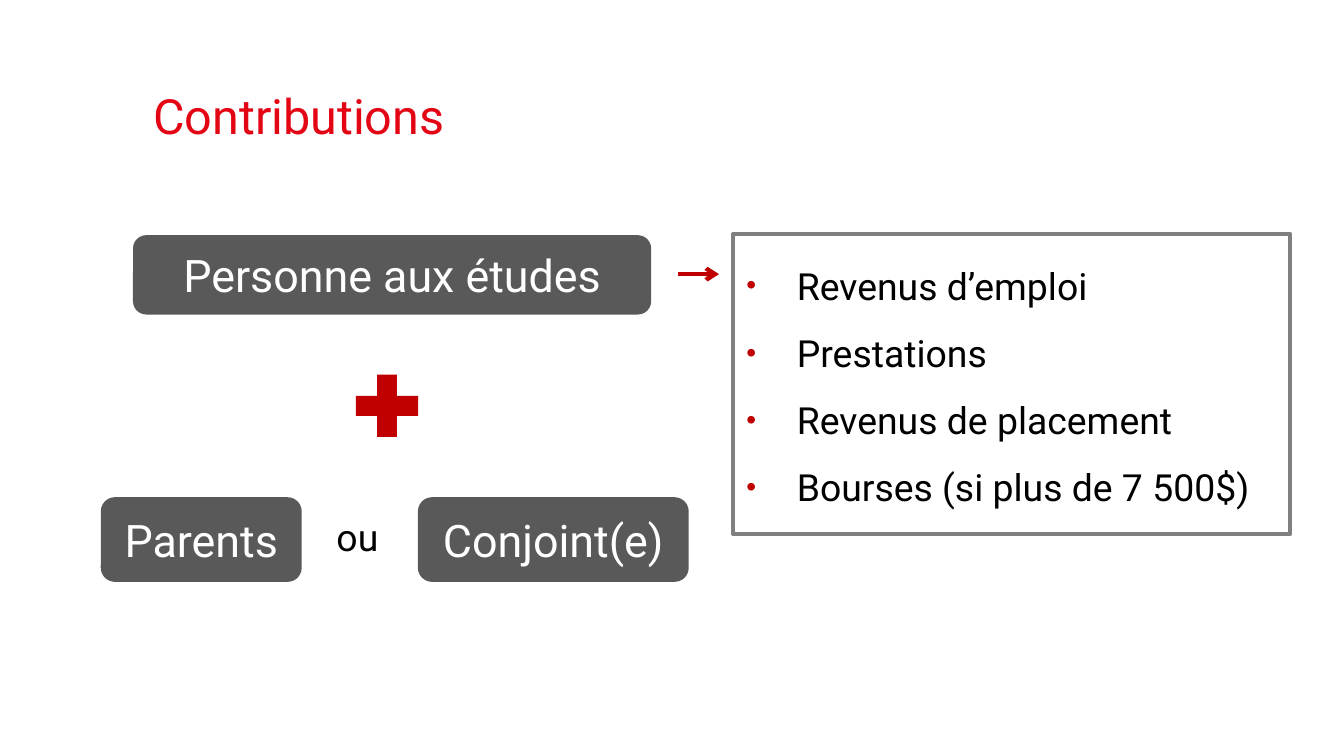
from lxml import etree
from pptx import Presentation
from pptx.dml.color import RGBColor
from pptx.enum.shapes import MSO_CONNECTOR, MSO_SHAPE
from pptx.enum.text import MSO_ANCHOR, PP_ALIGN
from pptx.oxml.ns import qn
from pptx.util import Pt

ROUND, RECT, PLUS = MSO_SHAPE.ROUNDED_RECTANGLE, MSO_SHAPE.RECTANGLE, MSO_SHAPE.MATH_PLUS
STRAIGHT = MSO_CONNECTOR.STRAIGHT
TOP, MIDDLE = MSO_ANCHOR.TOP, MSO_ANCHOR.MIDDLE
LEFT, CENTER = PP_ALIGN.LEFT, PP_ALIGN.CENTER

PX = 4572
THEME = {
    "font": "Roboto", "title": "E30513", "accent": "C00000", "box": "595959",
    "border": "808080", "light": "FFFFFF", "text": "000000",
    "title_size": 26, "box_size": 24, "body_size": 20, "line": 2.25,
}


def write(s, lines, size, color, anchor=TOP, **paragraph_format):
    tf = s.text_frame
    tf.word_wrap = True
    tf.vertical_anchor = anchor
    for i, line in enumerate(lines):
        p = tf.paragraphs[0] if i == 0 else tf.add_paragraph()
        for name, value in paragraph_format.items():
            setattr(p, name, value)
        r = p.add_run()
        r.text = line
        for name, value in {"name": THEME["font"], "size": Pt(THEME[size])}.items():
            setattr(r.font, name, value)
        r.font.color.rgb = RGBColor.from_string(THEME[color])
    return tf


def add_box(kind, at, fill=None, line=None):
    s = slide.shapes.add_shape(kind, *[v * PX for v in at])
    s.shadow.inherit = False
    for part, color in ((s.fill, fill), (s.line.fill, line)):
        if color:
            part.solid()
            part.fore_color.rgb = RGBColor.from_string(THEME[color])
        else:
            part.background()
    return s


prs = Presentation()
prs.slide_width, prs.slide_height = 2000 * PX, 1125 * PX
slide = prs.slides.add_slide(prs.slide_layouts[6])

title = slide.shapes.add_textbox(228 * PX, 138 * PX, 1620 * PX, 82 * PX)
tf = write(title, ["Contributions"], "title_size", "title", line_spacing=0.9)
for side in ("left", "top", "right", "bottom"):
    setattr(tf, f"margin_{side}", 0)

for label, at in (
    ("Personne aux études", (198, 350, 771, 118)),
    ("Parents", (150, 740, 299, 126)),
    ("Conjoint(e)", (622, 740, 403, 126)),
):
    s = add_box(ROUND, at, fill="box")
    write(s, [label], "box_size", "light", MIDDLE, alignment=CENTER)

either = slide.shapes.add_textbox(481 * PX, 764 * PX, 156 * PX, 70 * PX)
write(either, ["ou"], "body_size", "text", MIDDLE)

add_box(PLUS, (513, 541, 126, 126), fill="accent")

incomes = ["Revenus d’emploi", "Prestations", "Revenus de placement", "Bourses (si plus de 7 500$)"]
s = add_box(RECT, (1091, 348, 829, 447), line="border")
s.line.width = Pt(THEME["line"])
tf = write(s, incomes, "body_size", "text", alignment=LEFT, line_spacing=1.5)
for p in tf.paragraphs:
    pPr = p._p.get_or_add_pPr()
    pPr.set("marL", str(75 * PX))
    pPr.set("indent", str(-75 * PX))
    color = etree.SubElement(pPr, qn("a:buClr"))
    etree.SubElement(color, qn("a:srgbClr"), val=THEME["accent"])
    etree.SubElement(pPr, qn("a:buSzPct"), val="75000")
    etree.SubElement(pPr, qn("a:buFont"), typeface="Arial")
    etree.SubElement(pPr, qn("a:buChar"), char="•")

arrow = slide.shapes.add_connector(STRAIGHT, 1009 * PX, 408 * PX, 1070 * PX, 408 * PX)
arrow.line.width = Pt(THEME["line"])
arrow.line.color.rgb = RGBColor.from_string(THEME["accent"])
etree.SubElement(arrow.line._get_or_add_ln(), qn("a:tailEnd"), type="arrow")
etree.SubElement(arrow._element.spPr, qn("a:effectLst"))

prs.save("out.pptx")
